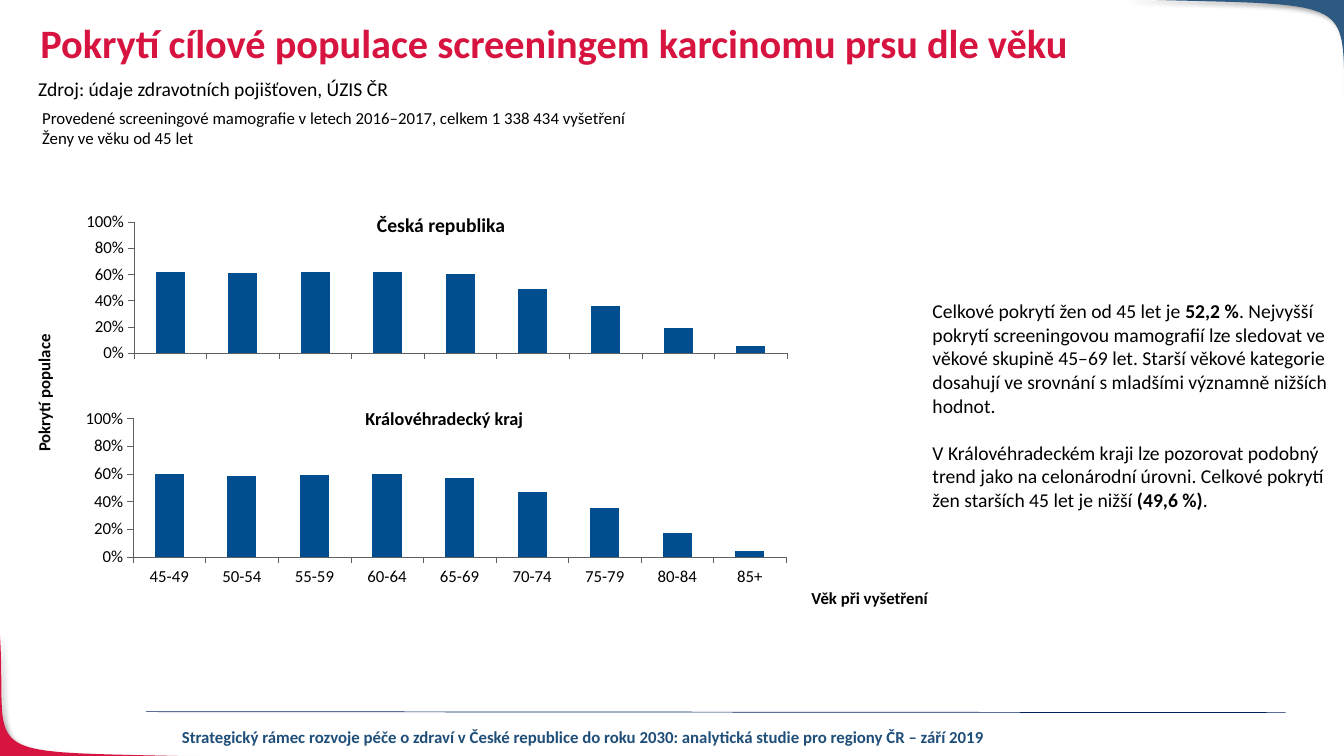
"""Slide on breast cancer screening coverage by age."""
from dataclasses import dataclass

from lxml.etree import SubElement
from pptx import Presentation
from pptx.chart.data import CategoryChartData
from pptx.dml.color import RGBColor
from pptx.enum.chart import XL_CHART_TYPE, XL_TICK_LABEL_POSITION, XL_TICK_MARK
from pptx.enum.shapes import MSO_CONNECTOR
from pptx.enum.text import MSO_ANCHOR, MSO_AUTO_SIZE, PP_ALIGN
from pptx.oxml.ns import qn
from pptx.util import Inches, Pt

COLORS = {
    "red": "D71440",
    "blue": "2E5980",
    "rule": "002060",
    "footer": "1F4E79",
    "text": "000000",
    "axis": "5F5F5F",
    "bar": "004E8F",
}
FONT = "Calibri"
Point = tuple[float, float]


@dataclass
class Corner:
    """Corner ornament: a Bézier edge closed through the slide corner."""
    color: str
    edge: tuple[Point, Point, Point, Point]
    tip: Point


@dataclass
class Caption:
    """Text box whose starred passages are bold."""
    box: tuple[float, float, float, float]
    paragraphs: tuple[str, ...]
    size: float
    color: str = "text"
    align: PP_ALIGN = PP_ALIGN.LEFT
    rotation: float = 0
    gap: float = 0


@dataclass
class Coverage:
    """Column chart of coverage for one territory."""
    box: tuple[float, float, float, float]
    plot: tuple[float, float, float, float]
    ages: tuple[str, ...]
    shares: tuple[float, ...]
    labelled: bool


CORNERS = [
    Corner("red", ((2.13, 7.51), (-0.34, 7.44), (0.08, 7.59), (0, 6.3)), (-0.01, 7.51)),
    Corner("blue", ((11.11, -0.01), (13.7, 0.07), (13.26, -0.1), (13.35, 1.42)), (13.35, -0.01)),
]
COVERAGES = [
    Coverage((0.55, 2.03, 7.48, 2.17), (0.104, 0.079, 0.866, 0.6),
             tuple("123456789"),
             (0.62, 0.61, 0.62, 0.62, 0.6, 0.49, 0.36, 0.19, 0.05), False),
    Coverage((0.46, 3.97, 7.89, 2.29), (0.109, 0.079, 0.821, 0.6),
             ("45-49", "50-54", "55-59", "60-64", "65-69", "70-74", "75-79", "80-84", "85+"),
             (0.6, 0.58, 0.59, 0.6, 0.57, 0.47, 0.35, 0.17, 0.04), True),
]
CAPTIONS = [
    Caption((1.57, 7.16, 8.43, 0.3),
            ("*Strategický rámec rozvoje péče o zdraví v České republice do roku 2030: "
             "analytická studie pro regiony ČR – září 2019*",),
            12, "footer", PP_ALIGN.CENTER),
    Caption((9.15, 2.92, 4.18, 2.29),
            ("Celkové pokrytí žen od 45 let je *52,2 %*. Nejvyšší pokrytí screeningovou "
             "mamografií lze sledovat ve věkové skupině 45–69 let. Starší věkové kategorie "
             "dosahují ve srovnání s mladšími významně nižších hodnot.",
             "V Královéhradeckém kraji lze pozorovat podobný trend jako na celonárodní úrovni. "
             "Celkové pokrytí žen starších 45 let je nižší *(49,6 %)*."),
            14, gap=17),
    Caption((0.28, 0.71, 8.47, 0.34), ("Zdroj: údaje zdravotních pojišťoven, ÚZIS ČR",), 14),
    Caption((0.32, 1.02, 7.34, 0.5),
            ("Provedené screeningové mamografie v letech 2016–2017, celkem 1 338 434 vyšetření",
             "Ženy ve věku od 45 let"), 12),
    Caption((0, 2.06, 8.75, 0.34), ("*Česká republika*",), 14, align=PP_ALIGN.CENTER),
    Caption((0.03, 3.99, 8.75, 0.32), ("*Královéhradecký kraj*",), 13, align=PP_ALIGN.CENTER),
    Caption((-0.61, 3.72, 2.15, 0.36), ("*Pokrytí populace*",), 12,
            align=PP_ALIGN.CENTER, rotation=270),
    Caption((7.95, 5.78, 1.41, 0.28), ("*Věk při vyšetření*",), 12),
]


def rgb(name: str) -> RGBColor:
    """Look up a named colour."""
    return RGBColor.from_string(COLORS[name])


def style(font, size: float, color: str, bold: bool) -> None:
    """Apply the slide's typeface with a size, colour and weight."""
    font.name, font.size, font.bold = FONT, Pt(size), bold
    font.color.rgb = rgb(color)


def bezier(edge: tuple[Point, ...], t: float) -> tuple[int, int]:
    """Return the point at t on a cubic curve."""
    weights = ((1 - t) ** 3, 3 * t * (1 - t) ** 2, 3 * t * t * (1 - t), t ** 3)
    x, y = (sum(w * p[axis] for w, p in zip(weights, edge)) for axis in (0, 1))
    return Inches(x), Inches(y)


def draw_corner(slide, corner: Corner) -> None:
    """Draw a shadowed corner ornament."""
    curve = [bezier(corner.edge, step / 40) for step in range(41)]
    builder = slide.shapes.build_freeform(*curve[0])
    builder.add_line_segments(curve[1:] + [tuple(Inches(v) for v in corner.tip)])
    ornament = builder.convert_to_shape()
    ornament.fill.solid()
    ornament.fill.fore_color.rgb = rgb(corner.color)
    ornament.line.fill.background()
    ornament.shadow.inherit = False
    effects = ornament._element.spPr.find(qn("a:effectLst"))
    shadow = SubElement(effects, qn("a:outerShdw"), blurRad=str(Pt(4)), dist=str(Pt(3)),
                        dir="2700000", rotWithShape="0")
    black = SubElement(shadow, qn("a:srgbClr"), val=COLORS["text"])
    SubElement(black, qn("a:alpha"), val="40000")


def draw_rule(slide) -> None:
    """Draw the line above the footer."""
    rule = slide.shapes.add_connector(MSO_CONNECTOR.STRAIGHT, Inches(1.45), Inches(7.06),
                                      Inches(12.75), Inches(7.07))
    rule.line.color.rgb = rgb("rule")
    rule.line.width = Pt(0.5)
    SubElement(rule._element.spPr, qn("a:effectLst"))


def draw_title(slide) -> None:
    """Fill and place the title placeholder."""
    title = slide.shapes.title
    title.left, title.top, title.width, title.height = map(Inches, (0.3, 0.18, 11.5, 0.69))
    frame = title.text_frame
    frame.text = "Pokrytí cílové populace screeningem karcinomu prsu dle věku"
    frame.auto_size = MSO_AUTO_SIZE.NONE
    frame.vertical_anchor = MSO_ANCHOR.TOP
    heading = frame.paragraphs[0]
    heading.alignment = PP_ALIGN.LEFT
    heading.line_spacing = 0.9
    style(heading.runs[0].font, 28.8, "red", True)


def draw_caption(slide, caption: Caption) -> None:
    """Draw one text box."""
    box = slide.shapes.add_textbox(*map(Inches, caption.box))
    box.rotation = caption.rotation
    frame = box.text_frame
    frame.word_wrap = True
    frame.text = "\n".join(caption.paragraphs)
    for index, paragraph in enumerate(frame.paragraphs):
        paragraph.alignment = caption.align
        if index and caption.gap:
            paragraph.space_before = Pt(caption.gap)
        passages = paragraph.text.split("*")
        paragraph.clear()
        for order, passage in enumerate(passages):
            if passage:
                run = paragraph.add_run()
                run.text = passage
                style(run.font, caption.size, caption.color, order % 2 == 1)


def draw_coverage(slide, coverage: Coverage) -> None:
    """Draw one column chart with a fixed inner plot area."""
    table = CategoryChartData(number_format="0%")
    table.categories = coverage.ages
    table.add_series("Series 1", coverage.shares)
    chart = slide.shapes.add_chart(XL_CHART_TYPE.COLUMN_CLUSTERED,
                                   *map(Inches, coverage.box), table).chart
    chart.has_title = chart.has_legend = False
    style(chart.font, 12, "text", False)
    columns = chart.plots[0]
    columns.gap_width = 150
    columns.vary_by_categories = False
    bars = columns.series[0].format.fill
    bars.solid()
    bars.fore_color.rgb = rgb("bar")
    for axis in (chart.category_axis, chart.value_axis):
        axis.has_major_gridlines = False
        axis.major_tick_mark = XL_TICK_MARK.OUTSIDE
        axis.minor_tick_mark = XL_TICK_MARK.NONE
        axis.format.line.color.rgb = rgb("axis")
        axis.format.line.width = Pt(0.25)
    if not coverage.labelled:
        chart.category_axis.tick_label_position = XL_TICK_LABEL_POSITION.NONE
    share = chart.value_axis
    share.minimum_scale, share.maximum_scale, share.major_unit = 0, 1, 0.2
    share.tick_labels.number_format = "0%"
    share.tick_labels.number_format_is_linked = False
    area = chart._chartSpace.chart.plotArea
    for old in area.findall(qn("c:layout")):
        area.remove(old)
    layout = SubElement(area, qn("c:layout"))
    area.insert(0, layout)
    manual = SubElement(layout, qn("c:manualLayout"))
    settings = {"layoutTarget": "inner", "xMode": "edge", "yMode": "edge",
                **dict(zip("xywh", coverage.plot))}
    for tag, setting in settings.items():
        SubElement(manual, qn(f"c:{tag}"), val=str(setting))


def main() -> None:
    """Build and save the slide."""
    deck = Presentation()
    deck.slide_width, deck.slide_height = Inches(13.33), Inches(7.5)
    slide = deck.slides.add_slide(deck.slide_layouts[5])
    for corner in CORNERS:
        draw_corner(slide, corner)
    draw_rule(slide)
    draw_title(slide)
    for coverage in COVERAGES:
        draw_coverage(slide, coverage)
    for caption in CAPTIONS:
        draw_caption(slide, caption)
    deck.save("out.pptx")


if __name__ == "__main__":
    main()
